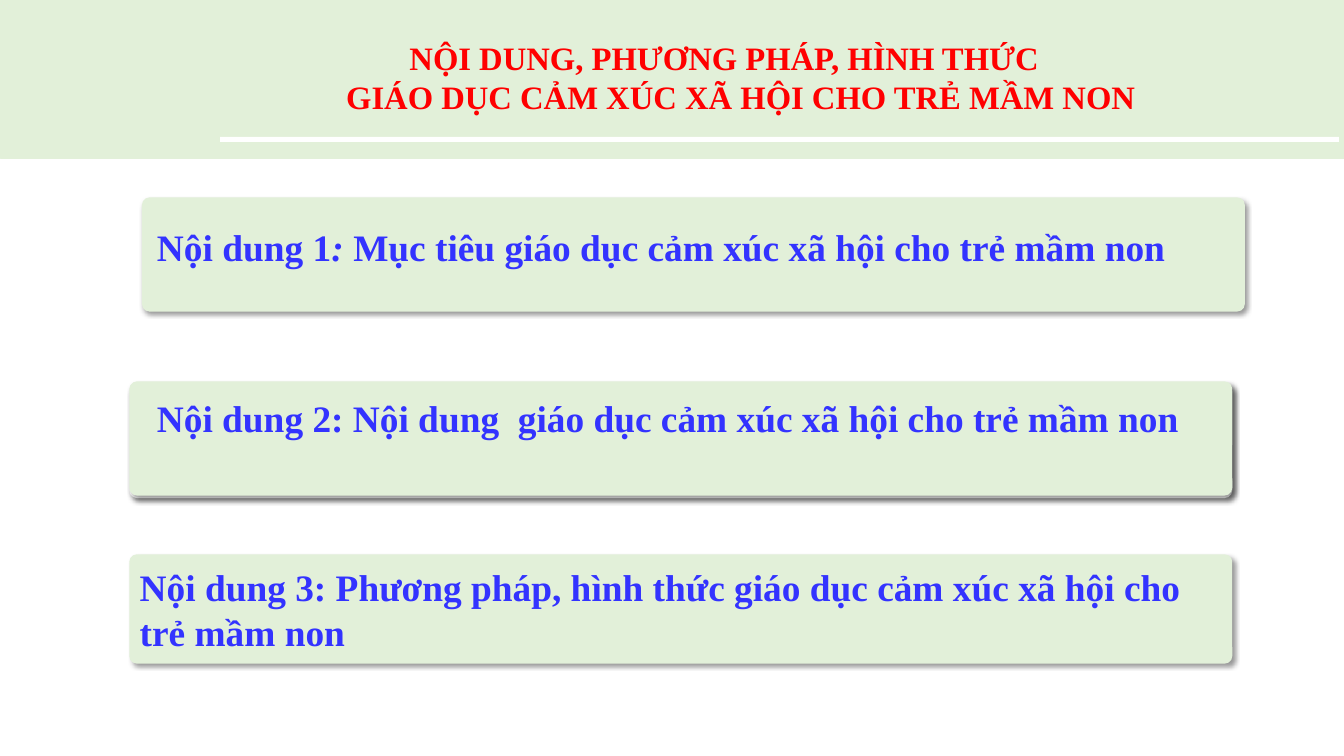
from lxml import etree
from pptx import Presentation, util as u
from pptx.dml.color import RGBColor
from pptx.enum import shapes, text
from pptx.oxml import parse_xml
from pptx.oxml.ns import nsdecls

COLORS = {"green": "E2F0D9", "white": "FFFFFF", "red": "FF0000", "blue": "3333FF"}
SHADOW = (
    f'<a:effectLst {nsdecls("a")}><a:outerShdw blurRad="50800" dist="38100" '
    'dir="2700000" algn="tl" rotWithShape="0"><a:srgbClr val="000000">'
    '<a:alpha val="40000"/></a:srgbClr></a:outerShdw></a:effectLst>'
)

deck = Presentation()
deck.slide_width, deck.slide_height = u.Inches(16), u.Inches(9)
slide = deck.slides.add_slide(deck.slide_layouts[6])


def add_block(kind, box, color):
    block = slide.shapes.add_shape(kind, *map(u.Inches, box))
    block.shadow.inherit = False
    block.fill.solid()
    block.fill.fore_color.rgb = RGBColor.from_string(COLORS[color])
    block.line.fill.background()
    return block


def style(para, size, color, align):
    para.alignment = align
    font = para.font
    font.name, font.size, font.bold = "Times New Roman", u.Pt(size), True
    font.color.rgb = RGBColor.from_string(COLORS[color])


RECT = shapes.MSO_SHAPE.RECTANGLE
ROUND = shapes.MSO_SHAPE.ROUNDED_RECTANGLE
LEFT, CENTER = text.PP_ALIGN.LEFT, text.PP_ALIGN.CENTER

band = add_block(RECT, (0.01, -0.05, 16.05, 1.94), "green")
band.line.color.rgb = RGBColor.from_string(COLORS["green"])
band.line.width = u.Pt(1)
frame = band.text_frame
frame.vertical_anchor = text.MSO_ANCHOR.MIDDLE
title = [
    ("NỘI DUNG, PHƯƠNG PHÁP, HÌNH THỨC", 1.17),
    ("GIÁO DỤC CẢM XÚC XÃ HỘI CHO TRẺ MẦM NON", 1.56),
]
for i, (words, indent) in enumerate(title):
    para = frame.add_paragraph() if i else frame.paragraphs[0]
    para.text = words
    para._p.get_or_add_pPr().set("marL", str(u.Inches(indent)))
    style(para, 28, "red", CENTER)

add_block(RECT, (2.62, 1.63, 13.32, 0.06), "white")

cards = []
for left, top, height, color in [
    (1.69, 2.35, 1.36, "green"),
    (1.54, 4.57, 1.36, "white"),
    (1.54, 4.54, 1.36, "green"),
    (1.54, 6.6, 1.3, "green"),
]:
    card = add_block(ROUND, (left, top, 13.13, height), color)
    card.adjustments[0] = 0.067
    props = card._element.spPr
    props.replace(props.find("{*}effectLst"), parse_xml(SHADOW))
    cards.append(card)

goal = add_block(RECT, (1.77, 2.46, 13.05, 0.74), "green")
topic = add_block(RECT, (1.77, 4.66, 12.9, 0.64), "green")
for block, parts, align, anchor in [
    (goal, ["Nội dung 1", ": ", "Mục tiêu giáo dục cảm xúc xã hội cho trẻ mầm non"],
     text.PP_ALIGN.JUSTIFY, text.MSO_ANCHOR.TOP),
    (topic, ["Nội dung 2: Nội dung  giáo dục cảm xúc xã hội cho trẻ mầm non"],
     LEFT, text.MSO_ANCHOR.TOP),
    (cards[-1], ["Nội dung 3: Phương pháp, hình thức giáo dục cảm xúc xã hội cho trẻ mầm non"],
     LEFT, text.MSO_ANCHOR.MIDDLE),
]:
    block.text_frame.vertical_anchor = anchor
    para = block.text_frame.paragraphs[0]
    for part in parts:
        run = para.add_run()
        run.text = part
        if part == ": ":
            run.font.italic = True
    style(para, 32, "blue", align)
goal.text_frame.paragraphs[0].line_spacing = 1.3

deck.save("out.pptx")
